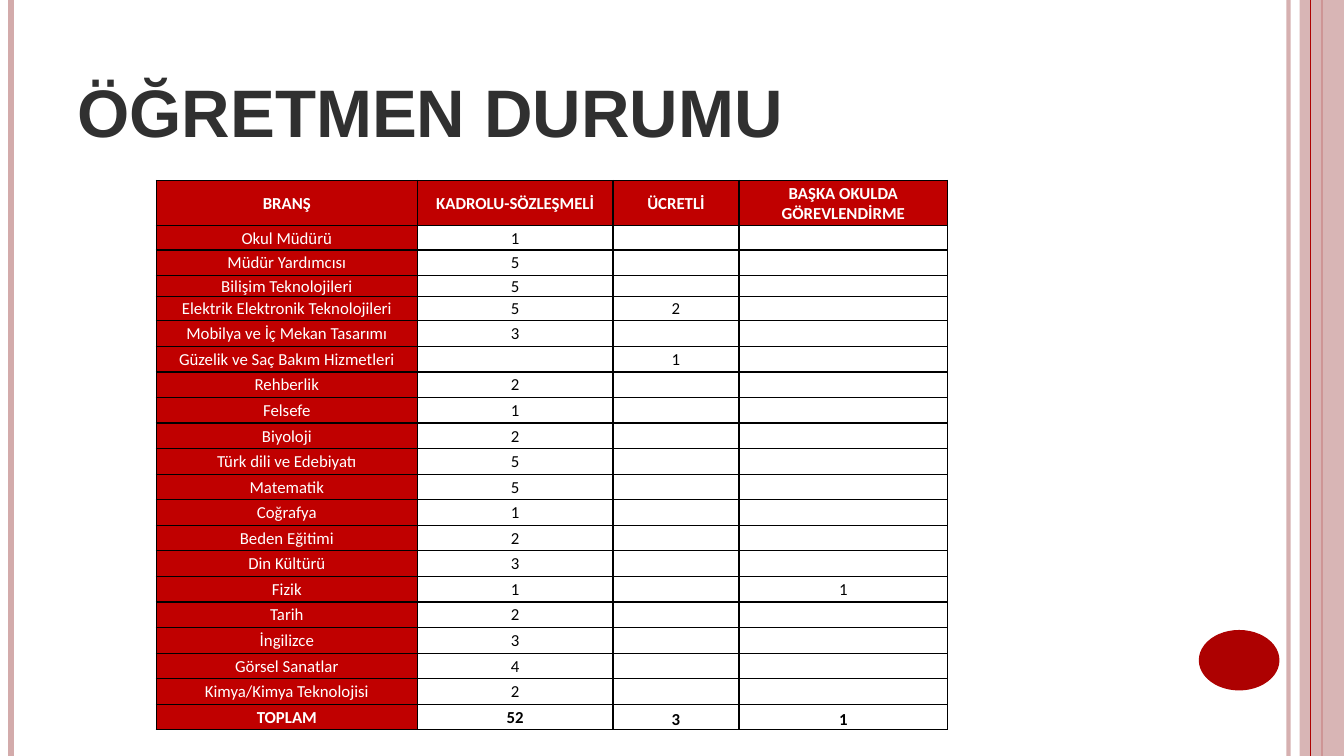
from dataclasses import dataclass

from lxml import etree
from pptx import Presentation
from pptx.dml.color import RGBColor
from pptx.enum.shapes import MSO_CONNECTOR, MSO_SHAPE
from pptx.enum.text import MSO_ANCHOR, PP_ALIGN
from pptx.oxml.ns import qn
from pptx.util import Inches, Pt

STRAIGHT = MSO_CONNECTOR.STRAIGHT
RECTANGLE, OVAL = MSO_SHAPE.RECTANGLE, MSO_SHAPE.OVAL
MIDDLE, BOTTOM = MSO_ANCHOR.MIDDLE, MSO_ANCHOR.BOTTOM
LEFT, CENTER = PP_ALIGN.LEFT, PP_ALIGN.CENTER


@dataclass(frozen=True)
class Theme:
    pink: str = "D3ABAB"
    red: str = "AD0101"
    cell_red: str = "C00000"
    title_gray: str = "303030"
    black: str = "000000"
    white: str = "FFFFFF"
    title_font: str = "Arial"
    table_font: str = "Calibri"
    title_size: int = 48
    table_size: int = 12
    border_width: float = 1


THEME = Theme()
PAGE_WIDTH, PAGE_HEIGHT = 13.33, 7.5


@dataclass(frozen=True)
class Stripe:
    x: float
    color: str
    width: float
    opacity: int = 100


@dataclass(frozen=True)
class Panel:
    kind: int
    left: float
    top: float
    width: float
    height: float
    color: str
    opacity: int = 100


@dataclass(frozen=True)
class Staff:
    branch: str
    permanent: str = ""
    hourly: str = ""
    assigned: str = ""

    def values(self) -> tuple:
        return self.branch, self.permanent, self.hourly, self.assigned


BACKDROP = (
    Stripe(12.78, THEME.pink, 3, 93),
    Stripe(0.11, THEME.pink, 4.5),
    Stripe(13.11, THEME.red, 1.5),
    Panel(RECTANGLE, 12.89, 0, 0.44, PAGE_HEIGHT, THEME.pink, 87),
    Stripe(13, THEME.red, 0.75),
    Panel(OVAL, 11.89, 6.25, 0.8, 0.6, THEME.red),
)

STAFF = (
    Staff("BRANŞ", "KADROLU-SÖZLEŞMELİ", "ÜCRETLİ", "BAŞKA OKULDA GÖREVLENDİRME"),
    Staff("Okul Müdürü", "1"),
    Staff("Müdür Yardımcısı", "5"),
    Staff("Bilişim Teknolojileri", "5"),
    Staff("Elektrik Elektronik Teknolojileri", "5", "2"),
    Staff("Mobilya ve İç Mekan Tasarımı", "3"),
    Staff("Güzelik ve Saç Bakım Hizmetleri", "", "1"),
    Staff("Rehberlik", "2"),
    Staff("Felsefe", "1"),
    Staff("Biyoloji", "2"),
    Staff("Türk dili ve Edebiyatı", "5"),
    Staff("Matematik", "5"),
    Staff("Coğrafya", "1"),
    Staff("Beden Eğitimi", "2"),
    Staff("Din Kültürü", "3"),
    Staff("Fizik", "1", "", "1"),
    Staff("Tarih", "2"),
    Staff("İngilizce", "3"),
    Staff("Görsel Sanatlar", "4"),
    Staff("Kimya/Kimya Teknolojisi", "2"),
    Staff("TOPLAM", "52", "3", "1"),
)

TABLE_LEFT, TABLE_TOP, TABLE_HEIGHT = 1.55, 1.79, 5.45
COLUMN_WIDTHS = (2.59, 1.94, 1.25, 2.07)
FIRST_ROWS = (0.45, 0.24, 0.25, 0.21, 0.24)


def set_opacity(properties, percent: int) -> None:
    """Add an alpha value to the first solid colour."""
    if percent < 100:
        color = next(properties.iter(qn("a:srgbClr")))
        etree.SubElement(color, qn("a:alpha"), val=str(percent * 1000))


def write(frame, text: str, *, font: str, size: int, color: str,
          bold: bool = False, align=LEFT) -> None:
    para = frame.paragraphs[0]
    para.alignment = align
    if not text:
        # An empty cell still needs a type size, or its row grows
        etree.SubElement(para._p, qn("a:endParaRPr"), sz=str(size * 100))
        return
    span = para.add_run()
    span.text = text
    span.font.name = font
    span.font.size = Pt(size)
    span.font.bold = bold
    span.font.color.rgb = RGBColor.from_string(color)


def draw_stripe(page, stripe: Stripe) -> None:
    x = Inches(stripe.x)
    line = page.shapes.add_connector(STRAIGHT, x, 0, x, Inches(PAGE_HEIGHT))
    line.line.color.rgb = RGBColor.from_string(stripe.color)
    line.line.width = Pt(stripe.width)
    properties = line._element.spPr
    set_opacity(properties, stripe.opacity)
    etree.SubElement(properties, qn("a:effectLst"))


def draw_panel(page, panel: Panel) -> None:
    shape = page.shapes.add_shape(
        panel.kind, Inches(panel.left), Inches(panel.top),
        Inches(panel.width), Inches(panel.height))
    shape.shadow.inherit = False
    shape.fill.solid()
    shape.fill.fore_color.rgb = RGBColor.from_string(panel.color)
    shape.line.fill.background()
    set_opacity(shape._element.spPr, panel.opacity)


def add_borders(cell) -> None:
    properties = cell._tc.get_or_add_tcPr()
    for index, side in enumerate(("a:lnL", "a:lnR", "a:lnT", "a:lnB")):
        border = etree.Element(qn(side), w=str(Pt(THEME.border_width)))
        fill = etree.SubElement(border, qn("a:solidFill"))
        etree.SubElement(fill, qn("a:srgbClr"), val=THEME.black)
        properties.insert(index, border)


def draw_table(page) -> None:
    last = len(STAFF) - 1
    even_rows = len(STAFF) - len(FIRST_ROWS)
    even_height = (TABLE_HEIGHT - sum(FIRST_ROWS)) / even_rows
    table = page.shapes.add_table(
        len(STAFF), len(COLUMN_WIDTHS), Inches(TABLE_LEFT), Inches(TABLE_TOP),
        Inches(sum(COLUMN_WIDTHS)), Inches(TABLE_HEIGHT)).table
    table.first_row = table.horz_banding = False
    for column, width in zip(table.columns, COLUMN_WIDTHS):
        column.width = Inches(width)
    for row, height in zip(table.rows, FIRST_ROWS + (even_height,) * even_rows):
        row.height = Inches(height)

    for r, staff in enumerate(STAFF):
        for c, text in enumerate(staff.values()):
            cell = table.cell(r, c)
            is_heading = r == 0 or c == 0
            cell.margin_left = cell.margin_right = cell.margin_top = Inches(0.01)
            cell.margin_bottom = 0
            cell.vertical_anchor = BOTTOM if r == last and c > 1 else MIDDLE
            if is_heading:
                cell.fill.solid()
                cell.fill.fore_color.rgb = RGBColor.from_string(THEME.cell_red)
            else:
                cell.fill.background()
            add_borders(cell)
            write(cell.text_frame, text, font=THEME.table_font,
                  size=THEME.table_size, bold=r in (0, last), align=CENTER,
                  color=THEME.white if is_heading else THEME.black)


def draw_title(page) -> None:
    box = page.shapes.add_textbox(
        Inches(0.67), Inches(0.3), Inches(10.89), Inches(1.25))
    box.text_frame.word_wrap = True
    box.text_frame.vertical_anchor = BOTTOM
    write(box.text_frame, "ÖĞRETMEN DURUMU", font=THEME.title_font,
          size=THEME.title_size, color=THEME.title_gray, bold=True)


def main() -> None:
    deck = Presentation()
    deck.slide_width, deck.slide_height = Inches(PAGE_WIDTH), Inches(PAGE_HEIGHT)
    page = deck.slides.add_slide(deck.slide_layouts[6])
    # Side stripes and badge
    for part in BACKDROP:
        if isinstance(part, Stripe):
            draw_stripe(page, part)
        else:
            draw_panel(page, part)
    # Staff table and title
    draw_table(page)
    draw_title(page)
    deck.save("out.pptx")


if __name__ == "__main__":
    main()
